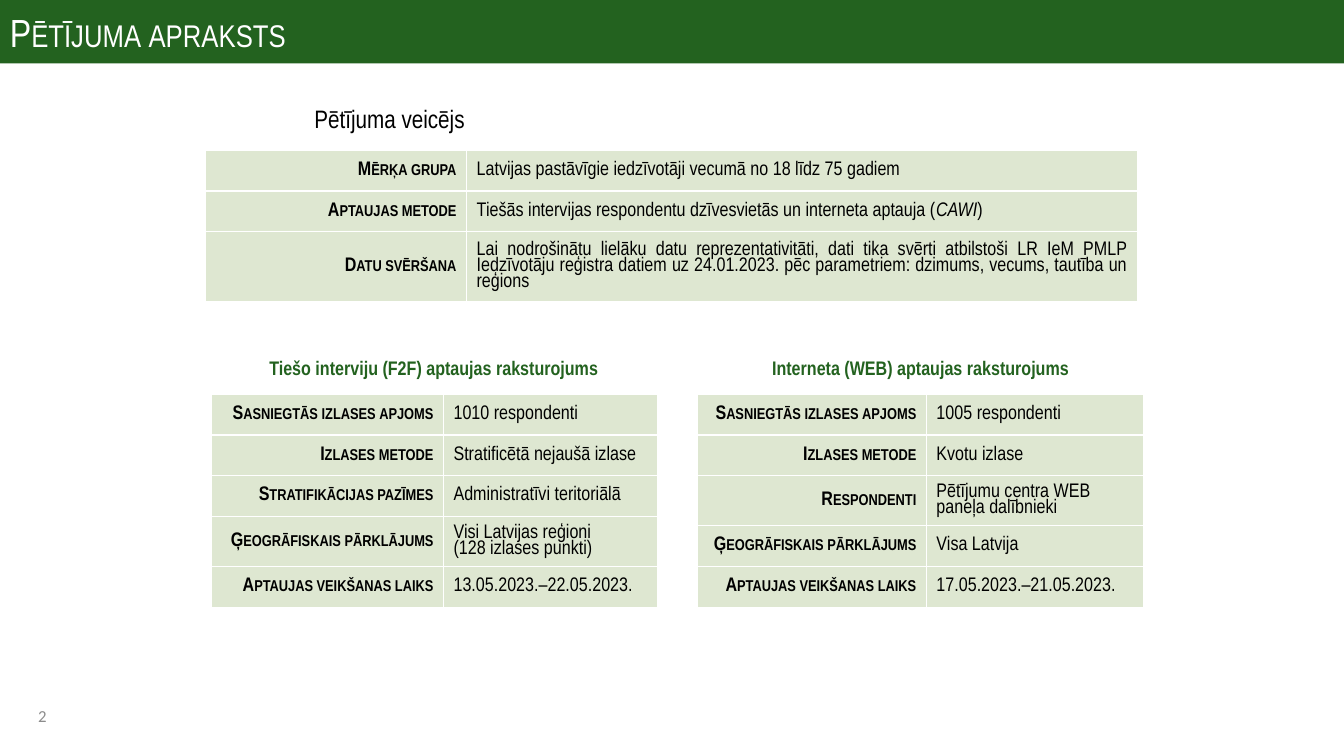
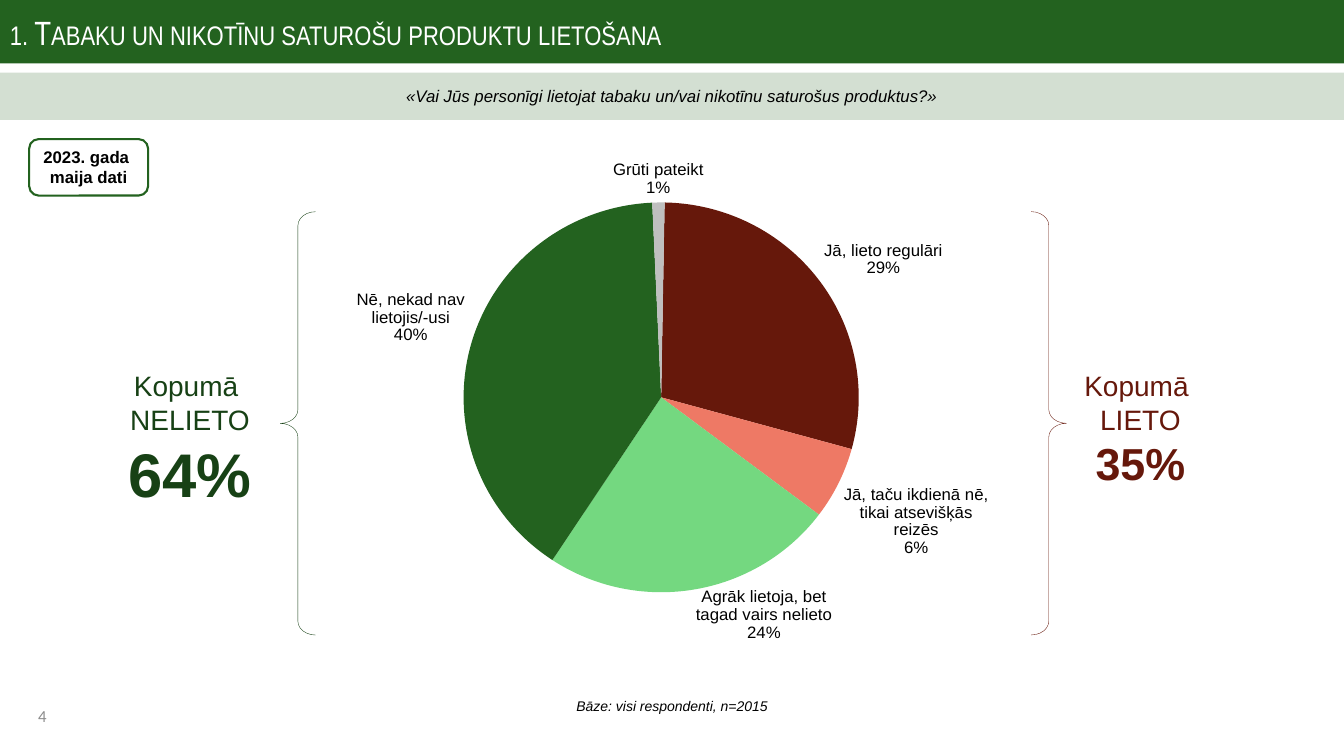
from dataclasses import dataclass
from typing import NamedTuple, Optional

from lxml.etree import SubElement
from pptx import Presentation
from pptx.chart.data import CategoryChartData
from pptx.dml.color import RGBColor as RGB
from pptx.enum.chart import XL_CHART_TYPE as ChartType, XL_LABEL_POSITION as LabelPos
from pptx.enum.shapes import MSO_SHAPE as Preset
from pptx.enum.text import MSO_ANCHOR as Anchor, PP_ALIGN as Align
from pptx.oxml import parse_xml
from pptx.oxml.ns import nsdecls, qn
from pptx.util import Inches, Pt

WIDTH, HEIGHT = 13.333, 7.5


@dataclass(frozen=True)
class Theme:
    green: str = "23621F"
    deep_green: str = "174115"
    light_green: str = "74D880"
    maroon: str = "66180B"
    salmon: str = "EE7965"
    silver: str = "BFBFBF"
    cell: str = "DEE7D1"
    grey: str = "8C8C8C"
    black: str = "000000"
    white: str = "FFFFFF"
    narrow: str = "Arial Narrow"
    sans: str = "Arial"
    footer_font: str = "Calibri"
    title: int = 28
    long_title: int = 24
    total: int = 20
    heading: int = 18
    table: int = 14
    label: int = 12
    note: int = 10
    table_spacing: float = 0.85


T = Theme()


class Box(NamedTuple):
    """Percent of the slide's width and height."""
    x: float
    y: float
    w: float
    h: float


@dataclass(frozen=True)
class Run:
    text: str
    size: float
    font: str = T.sans
    color: str = T.black
    bold: bool = False
    italic: bool = False
    small: bool = False


class Row(NamedTuple):
    label: str
    value: tuple[str, ...]
    italic: int = -1
    align: Align = Align.LEFT


class Grid(NamedTuple):
    x: float
    y: float
    cols: tuple[float, float]
    rows: tuple[Row, ...]


class Total(NamedTuple):
    text: str
    percent: str
    size: int
    color: str
    box: Box
    brace: Box
    turn: int


class Slice(NamedTuple):
    name: str
    value: int
    color: str


def across(share: float) -> int:
    return Inches(WIDTH * share / 100)


def down(share: float) -> int:
    return Inches(HEIGHT * share / 100)


def place(box: Box) -> tuple[int, int, int, int]:
    return across(box.x), down(box.y), across(box.w), down(box.h)


def write_run(p, run: Run) -> None:
    for i, line in enumerate(run.text.split("\n")):
        if i:
            p.add_line_break()
        r = p.add_run()
        r.text = line
        f = r.font
        f.name, f.size = run.font, Pt(run.size)
        f.bold, f.italic = run.bold, run.italic
        f.color.rgb = RGB.from_string(run.color)
        if run.small:
            r._r.get_or_add_rPr().set("cap", "small")


def write(tf, paragraphs: list[list[Run]], align: Align = Align.LEFT,
          anchor: Anchor = Anchor.TOP, spacing: Optional[float] = None) -> None:
    tf.word_wrap = True
    tf.vertical_anchor = anchor
    for i, runs in enumerate(paragraphs):
        p = tf.add_paragraph() if i else tf.paragraphs[0]
        p.alignment = align
        if spacing:
            p.line_spacing = spacing
        for run in runs:
            write_run(p, run)


def add_text(s, box: Box, *paragraphs: Run, align: Align = Align.CENTER,
             anchor: Anchor = Anchor.TOP) -> None:
    sp = s.shapes.add_textbox(*place(box))
    write(sp.text_frame, [[run] for run in paragraphs], align, anchor)


def add_shape(s, preset: Preset, box: Box, fill: Optional[str] = None,
              line: Optional[str] = None, weight: float = 1):
    sp = s.shapes.add_shape(preset, *place(box))
    sp.shadow.inherit = False
    if fill:
        sp.fill.solid()
        sp.fill.fore_color.rgb = RGB.from_string(fill)
    else:
        sp.fill.background()
    if line:
        sp.line.color.rgb = RGB.from_string(line)
        sp.line.width = Pt(weight)
    else:
        sp.line.fill.background()
    return sp


def add_base(prs, title: str, size: int, number: int):
    s = prs.slides.add_slide(prs.slide_layouts[6])
    add_text(s, Box(2.1, 92.67, 10.65, 5.33),
             Run(str(number), T.label, T.footer_font, T.grey), align=Align.LEFT)
    sp = add_shape(s, Preset.RECTANGLE, Box(0, 0, 100, 8.4), T.green)
    write(sp.text_frame, [[Run(title, size, T.narrow, T.white, small=True)]],
          anchor=Anchor.MIDDLE)
    return s


def border_cell(cell) -> None:
    pr = cell._tc.get_or_add_tcPr()
    for i, side in enumerate(("lnL", "lnR", "lnT", "lnB")):
        pr.insert(i, parse_xml(
            f'<a:{side} {nsdecls("a")} w="{Pt(1)}"><a:solidFill>'
            f'<a:srgbClr val="{T.white}"/></a:solidFill></a:{side}>'))


def add_grid(s, grid: Grid) -> None:
    row_h = 5.4
    box = Box(grid.x, grid.y, sum(grid.cols), row_h * len(grid.rows))
    table = s.shapes.add_table(len(grid.rows), 2, *place(box)).table
    table.first_row = table.horz_banding = False
    for col, share in zip(table.columns, grid.cols):
        col.width = across(share)
    for i, row in enumerate(grid.rows):
        table.rows[i].height = down(row_h)
        label = [Run(row.label, T.table, T.narrow, bold=True, small=True)]
        value = [Run(text, T.table, T.narrow, italic=j == row.italic)
                 for j, text in enumerate(row.value)]
        for j, (runs, align) in enumerate(((label, Align.RIGHT), (value, row.align))):
            cell = table.cell(i, j)
            cell.fill.solid()
            cell.fill.fore_color.rgb = RGB.from_string(T.cell)
            border_cell(cell)
            write(cell.text_frame, [runs], align, spacing=T.table_spacing)
            cell.vertical_anchor = Anchor.MIDDLE


def add_pie(s, box: Box, slices: tuple[Slice, ...]) -> None:
    data = CategoryChartData()
    data.categories = [part.name for part in slices]
    data.add_series("Series 1", [part.value for part in slices])
    chart = s.shapes.add_chart(ChartType.PIE, *place(box), data).chart
    chart.has_legend = chart.has_title = False
    chart.font.name, chart.font.size = T.sans, Pt(T.note)
    chart.font.color.rgb = RGB.from_string(T.black)
    plot = chart.plots[0]
    plot.vary_by_categories = True
    series = plot.series[0]
    for i, part in enumerate(slices):
        fmt = series.points[i].format
        fmt.fill.solid()
        fmt.fill.fore_color.rgb = RGB.from_string(part.color)
        fmt.line.fill.background()
    labels = series.data_labels
    labels.show_value = False
    labels.show_category_name = labels.show_percentage = True
    labels.number_format, labels.number_format_is_linked = "0%", False
    labels.position = LabelPos.OUTSIDE_END
    labels.font.name, labels.font.size = T.sans, Pt(T.label)
    labels.font.color.rgb = RGB.from_string(T.black)
    bubble = labels._element.find(qn("c:showBubbleSize"))
    bubble.addnext(parse_xml(f'<c:separator {nsdecls("c")}>\n</c:separator>'))
    area = chart._chartSpace.chart.plotArea
    pie = area.find(qn("c:pieChart"))
    for old in pie.findall(qn("c:firstSliceAng")):
        pie.remove(old)
    SubElement(pie, qn("c:firstSliceAng")).set("val", "1")
    for old in area.findall(qn("c:layout")):
        area.remove(old)
    shares = {"x": 0.225, "y": 0.121, "w": 0.511, "h": 0.781}
    inner = "".join(f'<c:{k} val="{v}"/>' for k, v in shares.items())
    area.insert(0, parse_xml(
        f'<c:layout {nsdecls("c")}><c:manualLayout><c:layoutTarget val="inner"/>'
        f'<c:xMode val="edge"/><c:yMode val="edge"/>{inner}</c:manualLayout></c:layout>'))


def add_total(s, total: Total) -> None:
    add_text(s, total.box, Run(total.text, T.total, color=total.color),
             Run(total.percent, total.size, color=total.color, bold=True))
    sp = add_shape(s, Preset.RIGHT_BRACE, total.brace, line=total.color, weight=0.25)
    sp.adjustments[0], sp.adjustments[1] = 0.39, 0.5
    sp.rotation = total.turn


GRIDS = (
    Grid(15.3, 19.87, (19.42, 49.95), (
        Row("Mērķa grupa", ("Latvijas pastāvīgie iedzīvotāji vecumā no 18 līdz 75 gadiem",)),
        Row("Aptaujas metode", (
            "Tiešās intervijas respondentu dzīvesvietās un interneta aptauja (", "CAWI", ")"), 1),
        Row("Datu svēršana", (
            "Lai nodrošinātu lielāku datu reprezentativitāti, dati tika svērti atbilstoši "
            "LR IeM PMLP Iedzīvotāju reģistra datiem uz 24.01.2023. pēc parametriem: "
            "dzimums, vecums, tautība un reģions",), align=Align.JUSTIFY))),
    Grid(51.9, 52.13, (17.03, 16.13), (
        Row("Sasniegtās izlases apjoms", ("1005 respondenti",)),
        Row("Izlases metode", ("Kvotu izlase",)),
        Row("Respondenti", ("Pētījumu centra WEB paneļa dalībnieki",)),
        Row("Ģeogrāfiskais pārklājums", ("Visa Latvija",)),
        Row("Aptaujas veikšanas laiks", ("17.05.2023.–21.05.2023.",)))),
    Grid(15.75, 52.13, (17.25, 15.95), (
        Row("Sasniegtās izlases apjoms", ("1010 respondenti",)),
        Row("Izlases metode", ("Stratificētā nejaušā izlase",)),
        Row("Stratifikācijas pazīmes", ("Administratīvi teritoriālā",)),
        Row("Ģeogrāfiskais pārklājums", ("Visi Latvijas reģioni \n(128 izlases punkti)",)),
        Row("Aptaujas veikšanas laiks", ("13.05.2023.–22.05.2023.",)))),
)
SLICES = (
    Slice("Jā, lieto regulāri", 29, T.maroon),
    Slice("Jā, taču ikdienā nē, tikai atsevišķās reizēs", 6, T.salmon),
    Slice("Agrāk lietoja, bet tagad vairs nelieto", 24, T.light_green),
    Slice("Nē, nekad nav lietojis/-usi", 40, T.green),
    Slice("Grūti pateikt", 1, T.silver),
)
TOTALS = (
    Total("Kopumā \nNELIETO", "64%", 44, T.deep_green,
          Box(7.05, 48.13, 14.18, 20.13), Box(20.85, 28, 2.63, 56), 180),
    Total("Kopumā \nLIETO", "35%", 32, T.maroon,
          Box(77.77, 48.13, 14.18, 17.47), Box(76.72, 28, 2.63, 56), 0),
)


def build_method(prs) -> None:
    s = add_base(prs, "Pētījuma apraksts", T.title, 2)
    for grid in GRIDS:
        add_grid(s, grid)
    for text, x, w in (("Tiešo interviju (F2F) aptaujas raksturojums", 19.2, 26.18),
                       ("Interneta (WEB) aptaujas raksturojums", 56.7, 23.62)):
        add_text(s, Box(x, 46.4, w, 4.53), Run(text, T.table, T.narrow, T.green, bold=True))
    add_text(s, Box(11.7, 13.07, 34.57, 5.33), Run("Pētījuma veicējs", T.heading, T.narrow))


def build_usage(prs) -> None:
    s = add_base(prs, "1. Tabaku un nikotīnu saturošu produktu lietošana", T.long_title, 4)
    sp = add_shape(s, Preset.RECTANGLE, Box(0, 9.6, 100, 6.27), T.green)
    color = sp._element.spPr.find(qn("a:solidFill")).find(qn("a:srgbClr"))
    SubElement(color, qn("a:alpha")).set("val", "20000")
    question = "«Vai Jūs personīgi lietojat tabaku un/vai nikotīnu saturošus produktus?»"
    write(sp.text_frame, [[Run(question, T.label, italic=True)]], Align.CENTER, Anchor.MIDDLE)
    add_text(s, Box(0, 90.27, 100, 6.27),
             Run("Bāze: visi respondenti, n=2015", T.note, italic=True), anchor=Anchor.MIDDLE)
    add_pie(s, Box(21.52, 18.8, 57.6, 66.93), SLICES)
    for total in TOTALS:
        add_total(s, total)
    sp = add_shape(s, Preset.ROUNDED_RECTANGLE, Box(2.17, 18.4, 8.85, 7.47),
                   line=T.green, weight=1.5)
    write(sp.text_frame, [[Run("2023. gada \nmaija dati", T.label, bold=True)]], Align.CENTER)


def main() -> None:
    prs = Presentation()
    prs.slide_width, prs.slide_height = Inches(WIDTH), Inches(HEIGHT)
    build_method(prs)
    build_usage(prs)
    prs.save("out.pptx")


if __name__ == "__main__":
    main()
